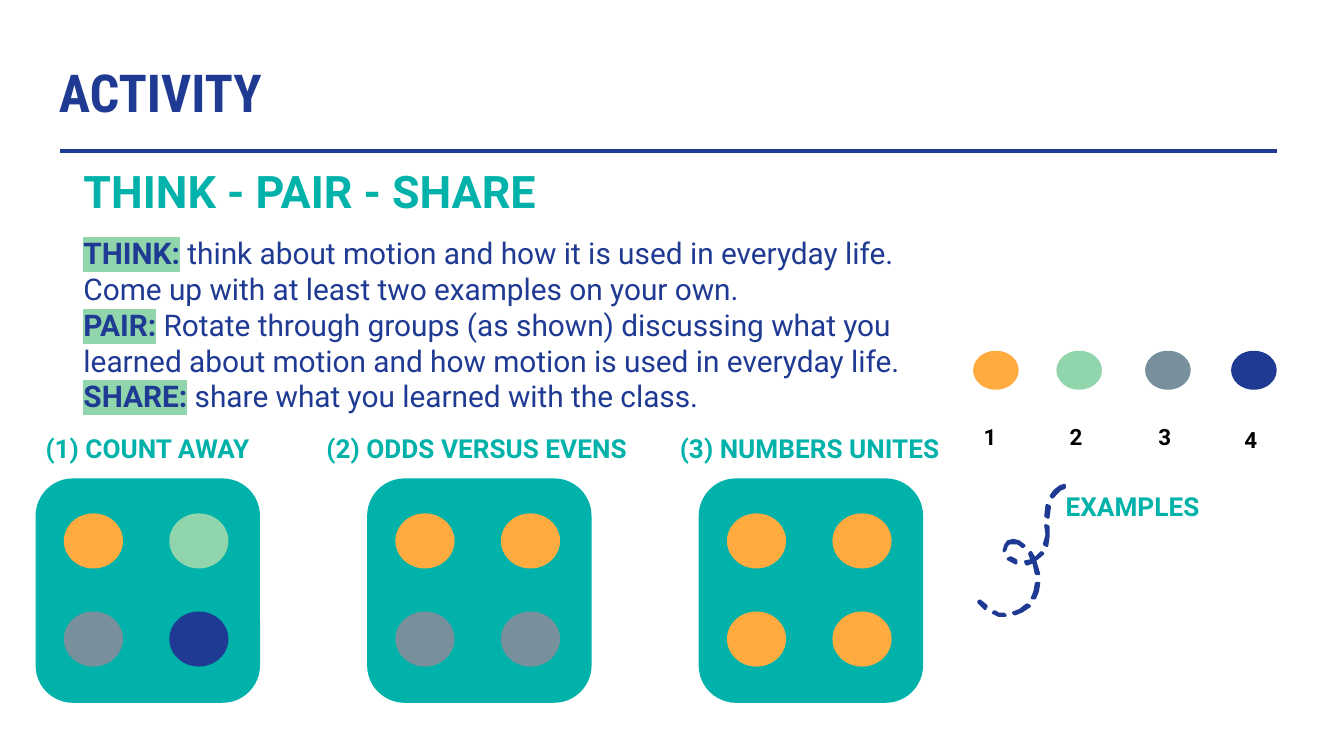
"""Build the Think - Pair - Share activity slide on a grid of 0.1 inch cells."""
from dataclasses import dataclass
from typing import Optional

import pptx
import pptx.dml.color
import pptx.enum.shapes
import pptx.oxml.ns
import pptx.util
from lxml import etree

CELL = pptx.util.Inches(0.1)
COLUMNS, ROWS = 100, 56.25
COLORS = {
    "navy": "1F3A93",
    "teal": "00B2A9",
    "mint": "91D5AC",
    "grey": "78909C",
    "orange": "FFAB40",
    "black": "000000",
}
SHAPES = pptx.enum.shapes.MSO_SHAPE


@dataclass(frozen=True)
class Area:
    col: float
    row: float
    cols: float
    rows: float

    def emu(self) -> list[int]:
        return [round(n * CELL) for n in (self.col, self.row, self.cols, self.rows)]


@dataclass(frozen=True)
class Round:
    heading: str
    heading_area: Area
    members: tuple[str, ...]


@dataclass(frozen=True)
class Member:
    number: str
    color: str
    dot_col: float
    number_col: float
    number_row: float


@dataclass(frozen=True)
class Step:
    keyword: str
    instruction: str


ROUNDS = (
    Round("(1) COUNT AWAY", Area(2.4, 31.2, 17.2, 4.4), ("orange", "mint", "grey", "navy")),
    Round("(2) ODDS VERSUS EVENS", Area(23.3, 31.2, 24.8, 4.4), ("orange", "orange", "grey", "grey")),
    Round("(3) NUMBERS UNITES", Area(49.6, 31.2, 28.9, 4.4), ("orange",) * 4),
)
MEMBERS = (
    Member("1", "orange", 72.4, 72.2, 30.5),
    Member("2", "mint", 78.6, 78.6, 30.5),
    Member("3", "grey", 85.2, 85.2, 30.5),
    Member("4", "navy", 91.6, 91.6, 30.7),
)
STEPS = (
    Step("THINK:", " think about motion and how it is used in everyday life. "
         "Come up with at least two examples on your own."),
    Step("PAIR:", " Rotate through groups (as shown) discussing what you learned "
         "about motion and how motion is used in everyday life."),
    Step("SHARE:", " share what you learned with the class."),
)
SWIRL_DASHES = (
    ((729, 447), (728, 448), (733, 453), (734, 451)),
    ((740, 455), (739, 456), (743, 458), (748, 458), (747, 457), (743, 457)),
    ((764, 450), (759, 454), (754, 456), (755, 457), (760, 455), (766, 451)),
    ((771, 434), (770, 440), (768, 445), (770, 445), (772, 440), (773, 434)),
    ((750, 403), (748, 406), (747, 410), (748, 409), (749, 406), (751, 404),
     (753, 404), (757, 404), (760, 406), (761, 407), (762, 406), (758, 403), (754, 402)),
    ((750, 416), (756, 419), (756, 417), (752, 415)),
    ((779, 376), (778, 384), (780, 385), (781, 377)),
    ((789, 362), (785, 365), (782, 369), (783, 370), (786, 367), (789, 364), (792, 363), (792, 361)),
    ((778, 391), (779, 398), (777, 405), (779, 406), (780, 399), (780, 392)),
    ((767, 411), (766, 412), (768, 417), (763, 418), (764, 420), (769, 418),
     (771, 427), (773, 427), (770, 417), (776, 412), (775, 411), (770, 416)),
)


def rgb(color: str) -> pptx.dml.color.RGBColor:
    return pptx.dml.color.RGBColor.from_string(COLORS[color])


def add_run(paragraph, text: str, *, size: float, color: str, bold: bool = True,
            font: str = "Roboto", highlight: Optional[str] = None) -> None:
    run = paragraph.add_run()
    run.text = text
    run.font.size = pptx.util.Pt(size)
    run.font.bold = bold
    run.font.color.rgb = rgb(color)
    run.font.name = font
    if highlight:
        mark = etree.Element(pptx.oxml.ns.qn("a:highlight"))
        etree.SubElement(mark, pptx.oxml.ns.qn("a:srgbClr"), val=COLORS[highlight])
        properties = run._r.get_or_add_rPr()
        properties.find(pptx.oxml.ns.qn("a:solidFill")).addnext(mark)


def add_frame(slide, area: Area):
    frame = slide.shapes.add_textbox(*area.emu()).text_frame
    frame.word_wrap = True
    frame.margin_left = frame.margin_right = CELL
    frame.margin_top = frame.margin_bottom = CELL
    return frame


def add_label(slide, text: str, area: Area, **style) -> None:
    add_run(add_frame(slide, area).paragraphs[0], text, **style)


def add_steps(slide, area: Area) -> None:
    frame = add_frame(slide, area)
    for index, step in enumerate(STEPS):
        paragraph = frame.add_paragraph() if index else frame.paragraphs[0]
        add_run(paragraph, step.keyword, size=16, color="navy", highlight="mint")
        add_run(paragraph, step.instruction, size=16, color="navy", bold=False)


def add_filled(slide, preset, area: Area, color: str):
    shape = slide.shapes.add_shape(preset, *area.emu())
    shape.shadow.inherit = False
    shape.fill.solid()
    shape.fill.fore_color.rgb = rgb(color)
    shape.line.fill.background()
    return shape


def add_round(slide, activity: Round, col: float, row: float) -> None:
    add_label(slide, activity.heading, activity.heading_area, size=14, color="teal")
    card = add_filled(slide, SHAPES.ROUNDED_RECTANGLE, Area(col, row, 16.7, 16.7), "teal")
    card.adjustments[0] = 0.167
    for index, color in enumerate(activity.members):
        down, across = divmod(index, 2)
        dot = Area(col + 2.1 + 7.85 * across, row + 2.6 + 7.3 * down, 4.4, 4.1)
        add_filled(slide, SHAPES.OVAL, dot, color)


def add_rule(slide, start_col: float, end_col: float, row: float) -> None:
    left, top, width, _ = Area(start_col, row, end_col - start_col, 0).emu()
    rule = slide.shapes.add_connector(
        pptx.enum.shapes.MSO_CONNECTOR.STRAIGHT, left, top, left + width, top)
    rule.line.color.rgb = rgb("navy")
    rule.line.width = pptx.util.Pt(2.25)
    etree.SubElement(rule._element.spPr, pptx.oxml.ns.qn("a:effectLst"))


def add_dash(slide, outline: tuple[tuple[int, int], ...]) -> None:
    builder = slide.shapes.build_freeform(*outline[0], scale=CELL / 10)
    builder.add_line_segments(outline[1:], close=True)
    dash = builder.convert_to_shape()
    dash.shadow.inherit = False
    dash.fill.solid()
    dash.fill.fore_color.rgb = rgb("navy")
    dash.line.color.rgb = rgb("navy")
    dash.line.width = pptx.util.Pt(1.5)


def main() -> None:
    deck = pptx.Presentation()
    deck.slide_width, deck.slide_height = Area(0, 0, COLUMNS, ROWS).emu()[2:]
    slide = deck.slides.add_slide(deck.slide_layouts[6])
    add_label(slide, "ACTIVITY", Area(3.4, 3.5, 93.2, 6.3),
              size=28, color="navy", font="Roboto Condensed")
    add_rule(slide, 4.5, 95, 11.23)
    add_label(slide, "THINK - PAIR - SHARE", Area(5.23, 11.2, 46.8, 6.3), size=24, color="teal")
    add_steps(slide, Area(5.23, 16.47, 64.5, 13.5))
    for index, activity in enumerate(ROUNDS):
        add_round(slide, activity, 2.65 + 24.67 * index, 35.6)
    for member in MEMBERS:
        add_filled(slide, SHAPES.OVAL, Area(member.dot_col, 26.1, 3.4, 2.9), member.color)
        add_label(slide, member.number, Area(member.number_col, member.number_row, 3.4, 4),
                  size=12, color="black")
    for outline in SWIRL_DASHES:
        add_dash(slide, outline)
    add_label(slide, "EXAMPLES", Area(78.3, 35.5, 17.2, 4.4), size=14, color="teal")
    deck.save("out.pptx")


if __name__ == "__main__":
    main()
